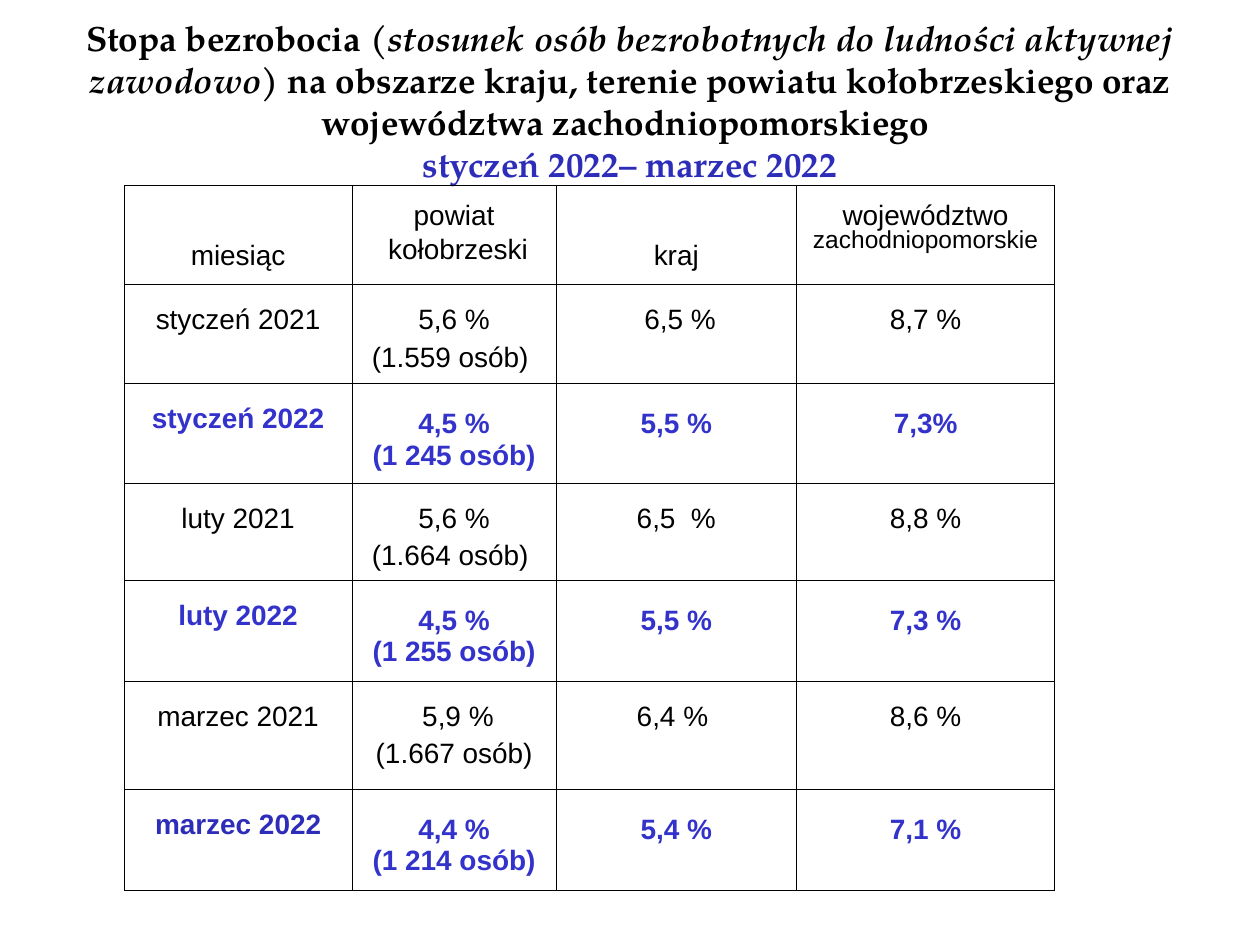
from dataclasses import dataclass

from lxml import etree
from pptx import Presentation
from pptx.dml.color import RGBColor
from pptx.enum.text import MSO_ANCHOR, MSO_AUTO_SIZE, PP_ALIGN
from pptx.oxml.ns import qn
from pptx.util import Cm, Pt

CENTER = PP_ALIGN.CENTER
MIDDLE = MSO_ANCHOR.MIDDLE
FIXED = MSO_AUTO_SIZE.NONE


@dataclass(frozen=True)
class Theme:
    """Colours, fonts and sizes of the slide."""
    black: str = "000000"
    blue: str = "3333CC"
    navy: str = "2D2DB9"
    serif: str = "TeX Gyre Pagella"
    sans: str = "Arial"
    head: float = 20
    body: float = 16
    small: float = 14
    edge: float = 0.23
    inner: float = 0.11
    tight: float = 0.81


THEME = Theme()
COLS = (4.6, 4.11, 4.85, 5.2)
ROWS = (2, 2, 2, 1.96, 2.04, 2.18, 2.04)
HEADS = (("miesiąc",), ("powiat", " kołobrzeski"), ("kraj",))
REGION = ("województwo ", "zachodniopomorskie")
DATA = (
    (("styczeń 2021",), ("5,6 %", "(1.559 osób) "), (" 6,5 %",), ("8,7 %",)),
    (("styczeń 2022",), ("4,5 %", "(1 245 osób)"), ("5,5 %",), ("7,3%",)),
    (("luty 2021",), ("5,6 %", "(1.664 osób) "), ("6,5  %",), ("8,8 %",)),
    (("luty 2022",), ("4,5 %", "(1 255 osób)"), ("5,5 %",), ("7,3 %",)),
    (("marzec 2021",), (" 5,9 %", "(1.667 osób)"), ("6,4 % ",), ("8,6 %",)),
    (("marzec 2022",), ("4,4 %", "(1 214 osób)"), ("5,4 %",), ("7,1 %",)),
)


def add_run(para, text, size=THEME.body, color=THEME.black, bold=False,
            italic=False, face=THEME.sans):
    """Add one formatted run to a paragraph."""
    run = para.add_run()
    run.text = text
    font = run.font
    font.name, font.size = face, Pt(size)
    font.bold, font.italic = bold, italic
    font.color.rgb = RGBColor.from_string(color)


def add_title(slide):
    """Place and fill the title."""
    title = slide.shapes.title
    title.left, title.top = Cm(1.27), Cm(0.33)
    title.width, title.height = Cm(22.86), Cm(3.4)
    frame = title.text_frame
    frame.word_wrap, frame.auto_size = True, FIXED
    frame.vertical_anchor = MIDDLE
    para = frame.paragraphs[0]
    para.alignment = CENTER
    style = {"size": THEME.head, "bold": True, "face": THEME.serif}
    add_run(para, "Stopa bezrobocia ", **style)
    add_run(para, "(stosunek osób bezrobotnych do ludności aktywnej zawodowo)",
            italic=True, **style)
    add_run(para, " na obszarze kraju, terenie powiatu kołobrzeskiego oraz "
            "województwa zachodniopomorskiego ", **style)
    para.add_line_break()
    add_run(para, "styczeń 2022– marzec 2022", color=THEME.navy, **style)


def set_lines(cell, row, col):
    """Draw the four borders of a cell."""
    outer = {"lnL": col == 0, "lnR": col == len(COLS) - 1,
             "lnT": row == 0, "lnB": False}
    props = cell._tc.get_or_add_tcPr()
    for tag, edge in outer.items():
        width = Pt(THEME.edge if edge else THEME.inner)
        line = etree.SubElement(props, qn(f"a:{tag}"), w=str(int(width)))
        fill = etree.SubElement(line, qn("a:solidFill"))
        etree.SubElement(fill, qn("a:srgbClr"), val=THEME.black)


def set_cell(cell, lines, top, gap=None, **style):
    """Fill a cell with centred paragraphs, tightened where a gap is given."""
    cell.margin_left = cell.margin_right = Cm(0.25)
    cell.margin_top, cell.margin_bottom = Cm(top), Cm(0.13)
    frame = cell.text_frame
    for index, text in enumerate(lines):
        para = frame.add_paragraph() if index else frame.paragraphs[0]
        para.alignment = CENTER
        if gap is not None:
            para.line_spacing, para.space_before = THEME.tight, Pt(gap)
        add_run(para, text, **style)


def add_heads(table):
    """Fill the heading row."""
    for col, lines in enumerate(HEADS):
        cell = table.cell(0, col)
        set_cell(cell, lines, 0.41 if len(lines) > 1 else 1.22, 5)
        if len(lines) == 1:
            cell.margin_bottom = 0
    cell = table.cell(0, len(HEADS))
    set_cell(cell, REGION[:1], 0.41, 5)
    add_run(cell.text_frame.paragraphs[0], REGION[1], THEME.small)


def add_data(table):
    """Fill the monthly rows, with the later year in bold blue."""
    for row, values in enumerate(DATA, 1):
        late = row % 2 == 0
        for col, lines in enumerate(values):
            gap = None if late and col else 7
            color = THEME.blue if late else THEME.black
            if row == len(DATA) and col == 0:
                color = THEME.navy
            set_cell(table.cell(row, col), lines, 0.51, gap,
                     color=color, bold=late)


def add_grid(slide):
    """Add the table with its sizes, borders and text."""
    frame = slide.shapes.add_table(len(ROWS), len(COLS), Cm(2.5), Cm(3.73),
                                   Cm(sum(COLS)), Cm(sum(ROWS)))
    table = frame.table
    table.first_row = table.horz_banding = False
    for col, width in zip(table.columns, COLS):
        col.width = Cm(width)
    for row, height in zip(table.rows, ROWS):
        row.height = Cm(height)
    for row in range(len(ROWS)):
        for col in range(len(COLS)):
            cell = table.cell(row, col)
            set_lines(cell, row, col)
            cell.fill.background()
    add_heads(table)
    add_data(table)


def main():
    """Build and save the slide."""
    deck = Presentation()
    deck.slide_width, deck.slide_height = Cm(25.4), Cm(19.05)
    slide = deck.slides.add_slide(deck.slide_layouts[5])
    add_title(slide)
    add_grid(slide)
    deck.save("out.pptx")


if __name__ == "__main__":
    main()
